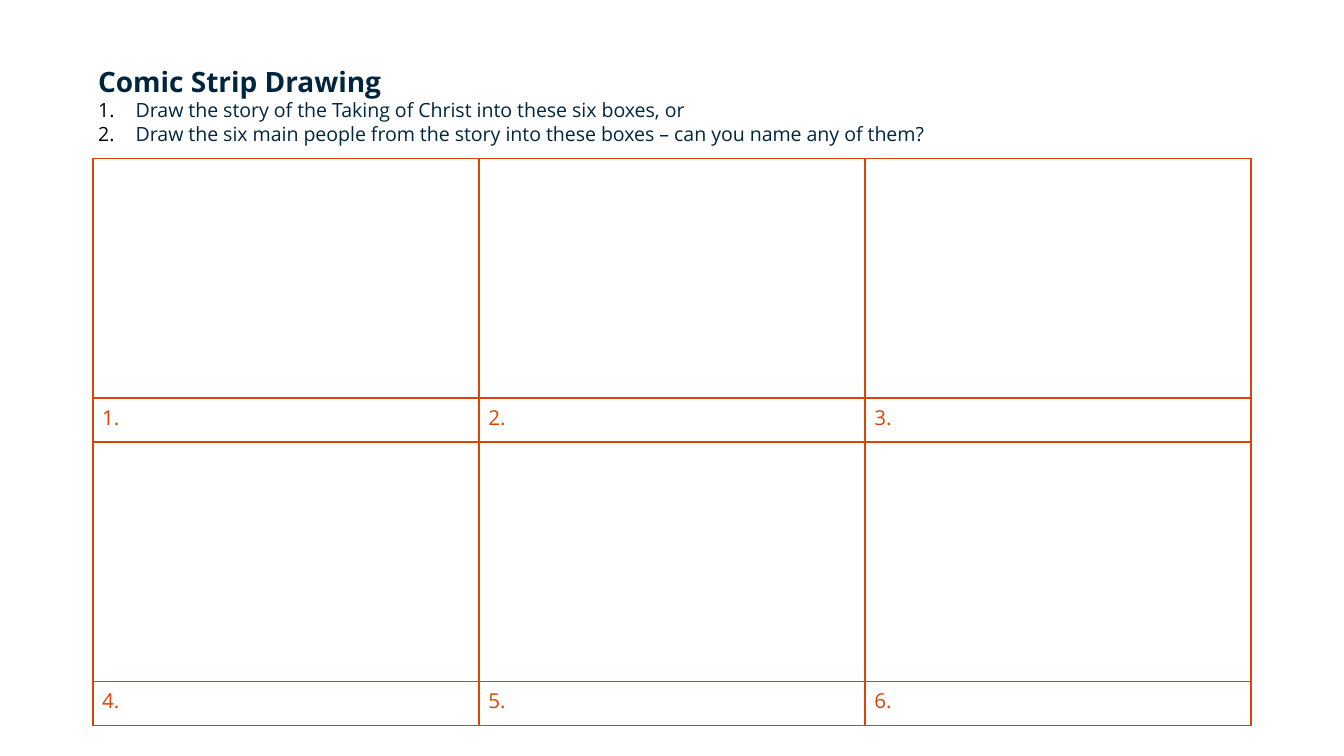
from lxml import etree
from pptx import Presentation
from pptx import util as u
from pptx.dml.color import RGBColor
from pptx.enum import text
from pptx.oxml import ns

TITLE = "Comic Strip Drawing"
TASKS = [
    "Draw the story of the Taking of Christ into these six boxes, or",
    "Draw the six main people from the story into these boxes – can you name any of them?",
]
CAPTIONS = [["1.", "2.", "3."], ["4.", "5.", "6."]]
FONT, NAVY, ORANGE, BLACK = "Open Sans", "00263E", "DC4405", "000000"
WIDTH = u.Inches(10)
HEIGHT = WIDTH * 9 // 16
GRID = dict(left=0.69, top=1.18, width=8.62)
PANEL_H, CAPTION_H = 1.78, 0.33


def rgb(value):
    return RGBColor.from_string(value)


def assign(obj, values):
    for name, value in values.items():
        setattr(obj, name, value)


def write(p, words, size, color, bold=False):
    r = p.add_run()
    r.text = words
    assign(r.font, dict(name=FONT, size=u.Pt(size), bold=bold))
    r.font.color.rgb = rgb(color)


def place(sp, top, height, inset):
    assign(sp, dict(left=u.Inches(0.63), top=u.Inches(top),
                    width=u.Inches(8.68), height=u.Inches(height)))
    tf = sp.text_frame
    assign(tf, dict(margin_left=u.Inches(0.1), margin_right=u.Inches(0.1),
                    margin_top=u.Inches(inset), margin_bottom=0, word_wrap=True,
                    auto_size=text.MSO_AUTO_SIZE.NONE,
                    vertical_anchor=text.MSO_ANCHOR.TOP))
    return tf


def layout(p):
    assign(p, dict(alignment=text.PP_ALIGN.LEFT, line_spacing=1.0,
                   space_before=u.Pt(0), space_after=u.Pt(0)))


def number(p):
    pPr = p._p.get_or_add_pPr()
    indent = u.Inches(0.28)
    pPr.set("marL", str(indent))
    pPr.set("indent", str(-indent))
    color = etree.SubElement(pPr, ns.qn("a:buClr"))
    etree.SubElement(color, ns.qn("a:srgbClr"), val=BLACK)
    etree.SubElement(pPr, ns.qn("a:buFont"), typeface=FONT)
    etree.SubElement(pPr, ns.qn("a:buAutoNum"), type="arabicPeriod")


def border(cell):
    tcPr = cell._tc.get_or_add_tcPr()
    for i, side in enumerate("LRTB"):
        ln = etree.Element(ns.qn("a:ln" + side), w=str(u.Pt(1)))
        fill = etree.SubElement(ln, ns.qn("a:solidFill"))
        etree.SubElement(fill, ns.qn("a:srgbClr"), val=ORANGE)
        tcPr.insert(i, ln)


def add_heading(slide):
    p = place(slide.shapes.title, 0.43, 0.31, 0.05).paragraphs[0]
    layout(p)
    write(p, TITLE, 15, NAVY, True)
    tf = place(slide.placeholders[1], 0.73, 0.41, 0)
    for i, task in enumerate(TASKS):
        p = tf.add_paragraph() if i else tf.paragraphs[0]
        layout(p)
        number(p)
        write(p, task, 10.5, NAVY)


def add_strip(slide):
    heights = [PANEL_H, CAPTION_H] * len(CAPTIONS)
    cols = len(CAPTIONS[0])
    box = [u.Inches(v) for v in (GRID["left"], GRID["top"], GRID["width"], sum(heights))]
    table = slide.shapes.add_table(len(heights), cols, *box).table
    assign(table, dict(first_row=False, horz_banding=False))
    for col in table.columns:
        col.width = u.Inches(GRID["width"] / cols)
    for r, height in enumerate(heights):
        table.rows[r].height = u.Inches(height)
        for c in range(cols):
            cell = table.cell(r, c)
            assign(cell, dict(margin_left=u.Inches(0.07), margin_right=u.Inches(0.07),
                              margin_top=u.Inches(0.04), margin_bottom=u.Inches(0.04)))
            cell.fill.background()
            border(cell)
            if r % 2:
                write(cell.text_frame.paragraphs[0], CAPTIONS[r // 2][c], 11, ORANGE)


def main():
    prs = Presentation()
    assign(prs, dict(slide_width=WIDTH, slide_height=HEIGHT))
    slide = prs.slides.add_slide(prs.slide_layouts[1])
    add_strip(slide)
    add_heading(slide)
    prs.save("out.pptx")


if __name__ == "__main__":
    main()
